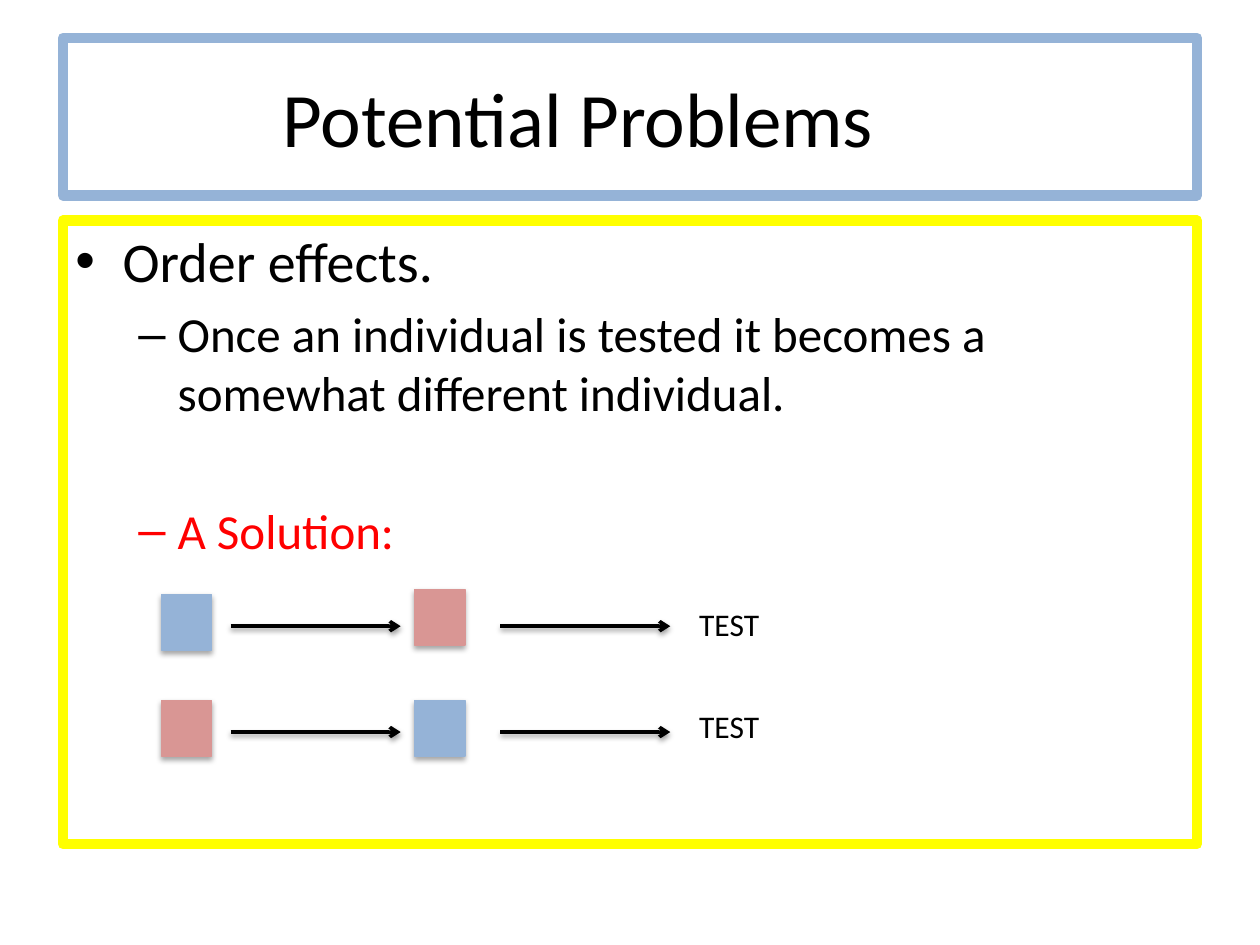
from lxml.etree import SubElement
from pptx import Presentation
from pptx.dml.color import RGBColor
from pptx.enum.shapes import MSO_CONNECTOR, MSO_SHAPE
from pptx.enum.text import MSO_ANCHOR, MSO_AUTO_SIZE, PP_ALIGN
from pptx.oxml.ns import qn
from pptx.util import Inches, Pt

BLACK = RGBColor(0x00, 0x00, 0x00)
BLUE = RGBColor(0x95, 0xB3, 0xD7)
PINK = RGBColor(0xD9, 0x96, 0x94)
RED = RGBColor(0xFF, 0x00, 0x00)
YELLOW = RGBColor(0xFF, 0xFF, 0x00)

COLS, ROWS = 100, 75


class SlideBuilder:
    """Draws on one slide; positions are columns and rows of a 100 x 75 grid."""

    font = "Calibri"

    def __init__(self, prs):
        self.slide = prs.slides.add_slide(prs.slide_layouts[6])
        self.col = prs.slide_width // COLS
        self.row = prs.slide_height // ROWS

    def place(self, x, y, w, h):
        return (round(x * self.col), round(y * self.row),
                round(w * self.col), round(h * self.row))

    def style(self, p, size, color=BLACK):
        for r in p.runs:
            r.font.name = self.font
            r.font.size = Pt(size)
            r.font.color.rgb = color

    def shadow(self, sp, alpha, distance):
        effects = SubElement(sp._element.spPr, qn("a:effectLst"))
        outer = SubElement(effects, qn("a:outerShdw"), blurRad=str(Pt(3.1)),
                           dist=str(Pt(distance)), dir="5400000", rotWithShape="0")
        black = SubElement(outer, qn("a:srgbClr"), val=str(BLACK))
        SubElement(black, qn("a:alpha"), val=str(alpha * 1000))

    def frame(self, x, y, w, h, color):
        """Add an unfilled, thickly outlined box and return its text frame."""
        sp = self.slide.shapes.add_shape(MSO_SHAPE.RECTANGLE, *self.place(x, y, w, h))
        sp.shadow.inherit = False
        sp.fill.background()
        sp.line.color.rgb = color
        sp.line.width = Pt(6)
        tf = sp.text_frame
        tf.word_wrap = True
        return tf

    def title(self, text, box, color, right_inset):
        tf = self.frame(*box, color)
        tf.vertical_anchor = MSO_ANCHOR.MIDDLE
        tf.margin_right = round(right_inset * self.col)
        p = tf.paragraphs[0]
        p.text = text
        p.alignment = PP_ALIGN.CENTER
        self.style(p, 44)

    def bullets(self, items, box, color):
        tf = self.frame(*box, color)
        tf.vertical_anchor = MSO_ANCHOR.TOP
        for i, (text, level, before, text_color) in enumerate(items):
            p = tf.add_paragraph() if i else tf.paragraphs[0]
            size, char, left, hang = ((32, "•", 3.75, 3.75), (28, "–", 8.12, 3.12))[level]
            p.text = text
            p.level = level
            p.alignment = PP_ALIGN.LEFT
            p.space_before = Pt(before)
            self.style(p, size, text_color)
            pPr = p._p.get_or_add_pPr()
            pPr.set("marL", str(round(left * self.col)))
            pPr.set("indent", str(-round(hang * self.col)))
            SubElement(pPr, qn("a:buFont"), typeface="Arial")
            SubElement(pPr, qn("a:buChar"), char=char)

    def block(self, x, y, color):
        sp = self.slide.shapes.add_shape(MSO_SHAPE.RECTANGLE, *self.place(x, y, 4, 4.4))
        sp.fill.solid()
        sp.fill.fore_color.rgb = color
        sp.line.color.rgb = color
        sp.line.width = Pt(0.75)
        self.shadow(sp, 35, 1.8)

    def arrow(self, x, y, length):
        left, top, width, _ = self.place(x, y, length, 0)
        line = self.slide.shapes.add_connector(
            MSO_CONNECTOR.STRAIGHT, left, top, left + width, top)
        line.line.color.rgb = BLACK
        line.line.width = Pt(2)
        SubElement(line.line._get_or_add_ln(), qn("a:tailEnd"), type="arrow")
        self.shadow(line, 38, 1.6)

    def label(self, text, x, y):
        tf = self.slide.shapes.add_textbox(*self.place(x, y, 6.9, 4)).text_frame
        tf.word_wrap = False
        tf.auto_size = MSO_AUTO_SIZE.SHAPE_TO_FIT_TEXT
        tf.text = text
        self.style(tf.paragraphs[0], 18)


def main():
    prs = Presentation()
    prs.slide_width, prs.slide_height = Inches(10), Inches(7.5)
    s = SlideBuilder(prs)

    s.title("Potential Problems", (5, 3, 90, 12.5), BLUE, right_inset=9.2)
    s.bullets([
        ("Order effects.", 0, 6.4, BLACK),
        ("Once an individual is tested it becomes a somewhat different individual.",
         1, 5.6, BLACK),
        ("A Solution:", 1, 45, RED),
    ], (5, 17.5, 90, 49.5), YELLOW)

    # Each order: first block, second block, arrow row, label row
    orders = [
        ((47.2, BLUE), (46.8, PINK), 49.7, 47.5),
        ((55.6, PINK), (55.6, BLUE), 58.1, 55.6),
    ]
    for first, second, arrow_row, label_row in orders:
        s.block(12.8, *first)
        s.block(32.9, *second)
        for x in (18.3, 39.7):
            s.arrow(x, arrow_row, 13.5)
        s.label("TEST", 54.5, label_row)

    prs.save("out.pptx")


if __name__ == "__main__":
    main()
